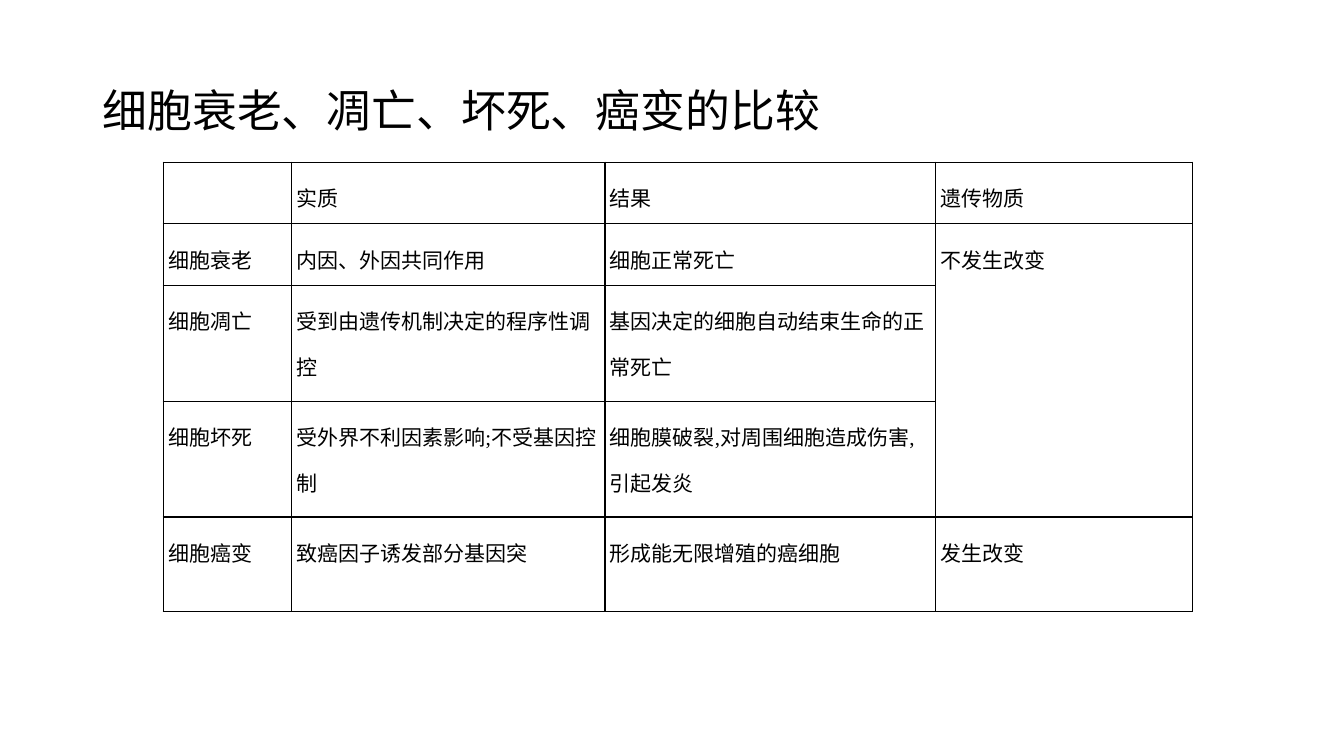
from lxml import etree
from pptx import Presentation
from pptx.dml.color import RGBColor
from pptx.enum.text import MSO_ANCHOR
from pptx.oxml.ns import qn
from pptx.util import Inches, Pt

MIDDLE, TOP = MSO_ANCHOR.MIDDLE, MSO_ANCHOR.TOP

# Content
TITLE = "细胞衰老、凋亡、坏死、癌变的比较"
ROWS = [
    ["", "实质", "结果", "遗传物质"],
    ["细胞衰老", "内因、外因共同作用", "细胞正常死亡", "不发生改变"],
    ["细胞凋亡", "受到由遗传机制决定的程序性调控", "基因决定的细胞自动结束生命的正常死亡", ""],
    ["细胞坏死", "受外界不利因素影响;不受基因控制", "细胞膜破裂,对周围细胞造成伤害,引起发炎", ""],
    ["细胞癌变", "致癌因子诱发部分基因突", "形成能无限增殖的癌细胞", "发生改变"],
]
MERGE = (1, 3), (3, 3)

# Format
COL_WIDTHS = [1.27, 3.11, 3.28, 2.55]
ROW_HEIGHTS = [0.61, 0.61, 1.15, 1.15, 0.94]
TABLE_LEFT, TABLE_TOP = 1.62, 1.61
BLACK = "000000"
CJK_FONT = "Noto Sans CJK SC"
TITLE_FONT = {"name": CJK_FONT, "size": Pt(32)}
CELL_FONT = {"name": "Times New Roman", "size": Pt(15)}
CELL_FORMAT = {"vertical_anchor": TOP}
CELL_FORMAT.update({f"margin_{side}": Inches(0.05)
                    for side in ("left", "right", "top", "bottom")})
BORDER_WIDTH = Pt(1)


def color(value):
    return RGBColor.from_string(value)


def set_format(target, values):
    for name, value in values.items():
        setattr(target, name, value)


def write(tf, text, font, spacing):
    p = tf.paragraphs[0]
    p.line_spacing = spacing
    if not text:
        set_format(p.font, font)
        return
    r = p.add_run()
    r.text = text
    set_format(r.font, font)
    r.font.color.rgb = color(BLACK)
    etree.SubElement(r.font._element, qn("a:ea"), typeface=CJK_FONT)


def add_borders(cell):
    tcPr = cell._tc.get_or_add_tcPr()
    for side in ("lnL", "lnR", "lnT", "lnB"):
        ln = etree.SubElement(tcPr, qn(f"a:{side}"), w=str(BORDER_WIDTH))
        fill = etree.SubElement(ln, qn("a:solidFill"))
        etree.SubElement(fill, qn("a:srgbClr"), val=BLACK)


prs = Presentation()
prs.slide_width, prs.slide_height = Inches(13.33), Inches(7.5)
s = prs.slides.add_slide(prs.slide_layouts[6])

# Comparison table
table = s.shapes.add_table(
    len(ROWS), len(COL_WIDTHS), Inches(TABLE_LEFT), Inches(TABLE_TOP),
    Inches(sum(COL_WIDTHS)), Inches(sum(ROW_HEIGHTS))).table
table.first_row = table.horz_banding = False
for column, width in zip(table.columns, COL_WIDTHS):
    column.width = Inches(width)
for row, height, texts in zip(table.rows, ROW_HEIGHTS, ROWS):
    row.height = Inches(height)
    for cell, text in zip(row.cells, texts):
        set_format(cell, CELL_FORMAT)
        add_borders(cell)
        cell.fill.background()
        write(cell.text_frame, text, CELL_FONT, 1.5)
first, last = MERGE
table.cell(*first).merge(table.cell(*last))

# Title
tf = s.shapes.add_textbox(Inches(0.92), Inches(0.4), Inches(11.5), Inches(1.45)).text_frame
set_format(tf, {"word_wrap": True, "vertical_anchor": MIDDLE})
write(tf, TITLE, TITLE_FONT, 0.9)

prs.save("out.pptx")
